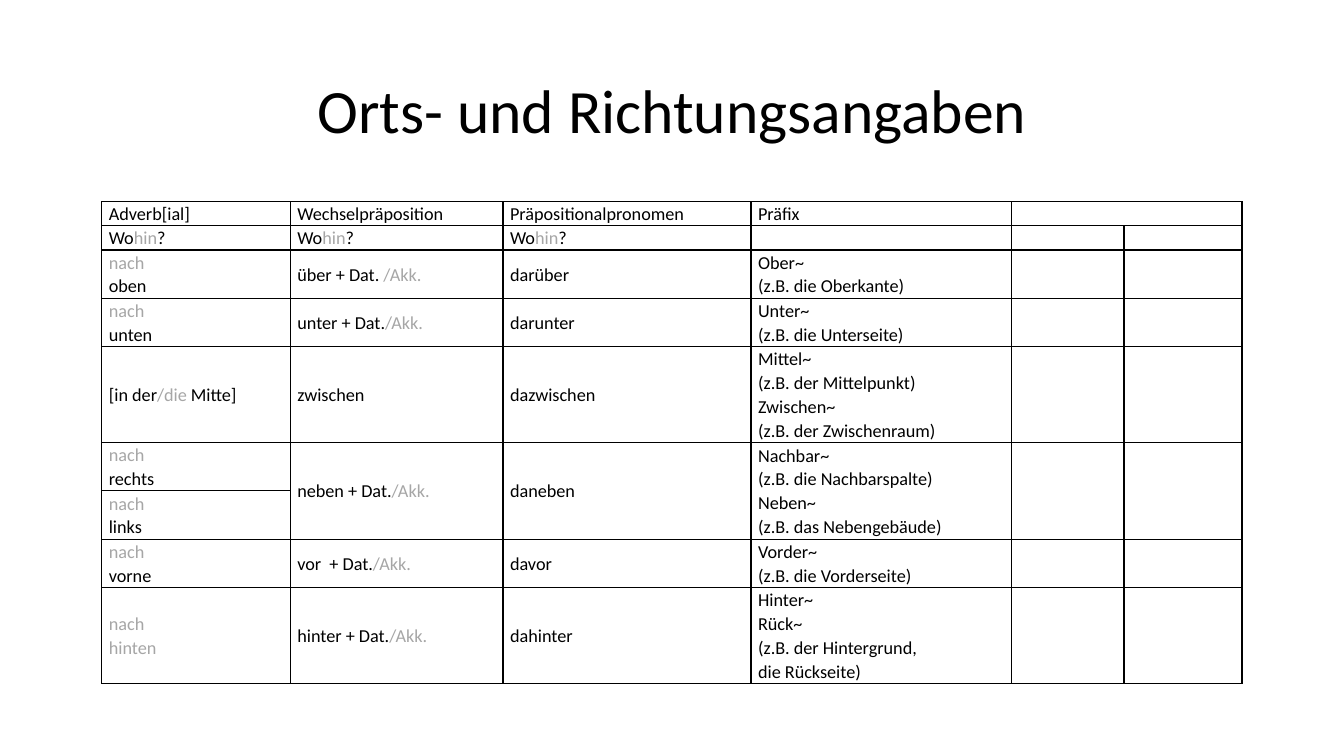
from lxml.etree import SubElement
from pptx import Presentation
from pptx.dml.color import RGBColor
from pptx.enum.text import MSO_ANCHOR as ANCHOR, PP_ALIGN as ALIGN
from pptx.oxml import parse_xml
from pptx.oxml.ns import nsdecls, qn
from pptx.util import Inches, Pt

FONT = "Calibri"
BLACK, GREY = "000000", "A6A6A6"
CELL_SIZE = 13
COLUMNS = [1.87, 2.11, 2.46, 2.58, 1.12, 1.17]
HEIGHTS = [0.24, 0.24, 0.48, 0.48, 0.95, 0.48, 0.48, 0.48, 0.95]
MERGES = [(0, 4, 0, 5)] + [(5, c, 6, c) for c in range(1, 6)]
CELL_FORMAT = {
    "vertical_anchor": ANCHOR.MIDDLE,
    "margin_left": Inches(0.07),
    "margin_right": Inches(0.07),
    "margin_top": 0,
    "margin_bottom": 0,
}
# Text markup: | switches between black and grey, \v breaks a line, \n starts a paragraph.
ROWS = [
    ["Adverb[ial]", "Wechselpräposition", "Präpositionalpronomen", "Präfix"],
    ["Wo|hin|?"] * 3,
    ["|nach\v|oben", "über + Dat. |/Akk.", "darüber", "Ober~ \v(z.B. die Oberkante)"],
    ["|nach\v|unten", "unter + Dat.|/Akk.", "darunter", "Unter~ \v(z.B. die Unterseite)"],
    ["[in der|/die| Mitte]", "zwischen", "dazwischen",
     "Mittel~ \v(z.B. der Mittelpunkt)\nZwischen~\v(z.B. der Zwischenraum)"],
    ["|nach\v|rechts", "neben + Dat.|/Akk.", "daneben",
     "Nachbar~ \v(z.B. die Nachbarspalte)\nNeben~\n(z.B. das Nebengebäude)"],
    ["|nach\v|links"],
    ["|nach \v|vorne", "vor  + Dat.|/Akk.", "davor", "Vorder~\n(z.B. die Vorderseite)"],
    ["|nach\n|hinten", "hinter + Dat.|/Akk.", "dahinter",
     "Hinter~\vRück~\n(z.B. der Hintergrund,\vdie Rückseite)"],
]


def apply(obj, values):
    for name, value in values.items():
        setattr(obj, name, value)


def rgb(color):
    return RGBColor.from_string(color)


def add_run(p, text, size, color):
    r = p.add_run()
    r.text = text
    apply(r.font, {"name": FONT, "size": Pt(size)})
    r.font.color.rgb = rgb(color)


def add_title(slide, text):
    sp = slide.shapes.title
    apply(sp, {"left": Inches(0.92), "top": Inches(0.4),
               "width": Inches(11.5), "height": Inches(1.45)})
    sp.text_frame.vertical_anchor = ANCHOR.MIDDLE
    p = sp.text_frame.paragraphs[0]
    apply(p, {"alignment": ALIGN.CENTER, "line_spacing": 0.9})
    add_run(p, text, 44, BLACK)


def fill_paragraph(p, text):
    p.line_spacing = 1.07
    for i, part in enumerate(text.split("|")):
        for j, line in enumerate(part.split("\v")):
            if j:
                p.add_line_break()
            if line:
                add_run(p, line, CELL_SIZE, GREY if i % 2 else BLACK)
    size = str(CELL_SIZE * 100)
    for br in p._p.findall(qn("a:br")):
        SubElement(br, qn("a:rPr"), sz=size)
    SubElement(p._p, qn("a:endParaRPr"), sz=size)


def add_borders(cell):
    tc_pr = cell._tc.get_or_add_tcPr()
    for i, side in enumerate("LRTB"):
        tc_pr.insert(i, parse_xml(
            f'<a:ln{side} {nsdecls("a")} w="12700"><a:solidFill>'
            f'<a:srgbClr val="{BLACK}"/></a:solidFill></a:ln{side}>'))


def fill_cell(cell, text):
    apply(cell, CELL_FORMAT)
    cell.fill.background()
    add_borders(cell)
    tf = cell.text_frame
    for i, line in enumerate(text.split("\n")):
        fill_paragraph(tf.add_paragraph() if i else tf.paragraphs[0], line)


def add_grid(slide):
    table = slide.shapes.add_table(
        len(HEIGHTS), len(COLUMNS), Inches(1.01), Inches(2),
        Inches(sum(COLUMNS)), Inches(sum(HEIGHTS))).table
    apply(table, {"first_row": False, "horz_banding": False})
    for column, width in zip(table.columns, COLUMNS):
        column.width = Inches(width)
    for row, height, texts in zip(table.rows, HEIGHTS, ROWS):
        row.height = Inches(height)
        for c, cell in enumerate(row.cells):
            fill_cell(cell, texts[c] if c < len(texts) else "")
    for top, left, bottom, right in MERGES:
        table.cell(top, left).merge(table.cell(bottom, right))


def main():
    prs = Presentation()
    apply(prs, {"slide_width": Inches(13.33), "slide_height": Inches(7.5)})
    slide = prs.slides.add_slide(prs.slide_layouts[5])
    add_title(slide, "Orts- und Richtungsangaben")
    add_grid(slide)
    prs.save("out.pptx")


if __name__ == "__main__":
    main()
